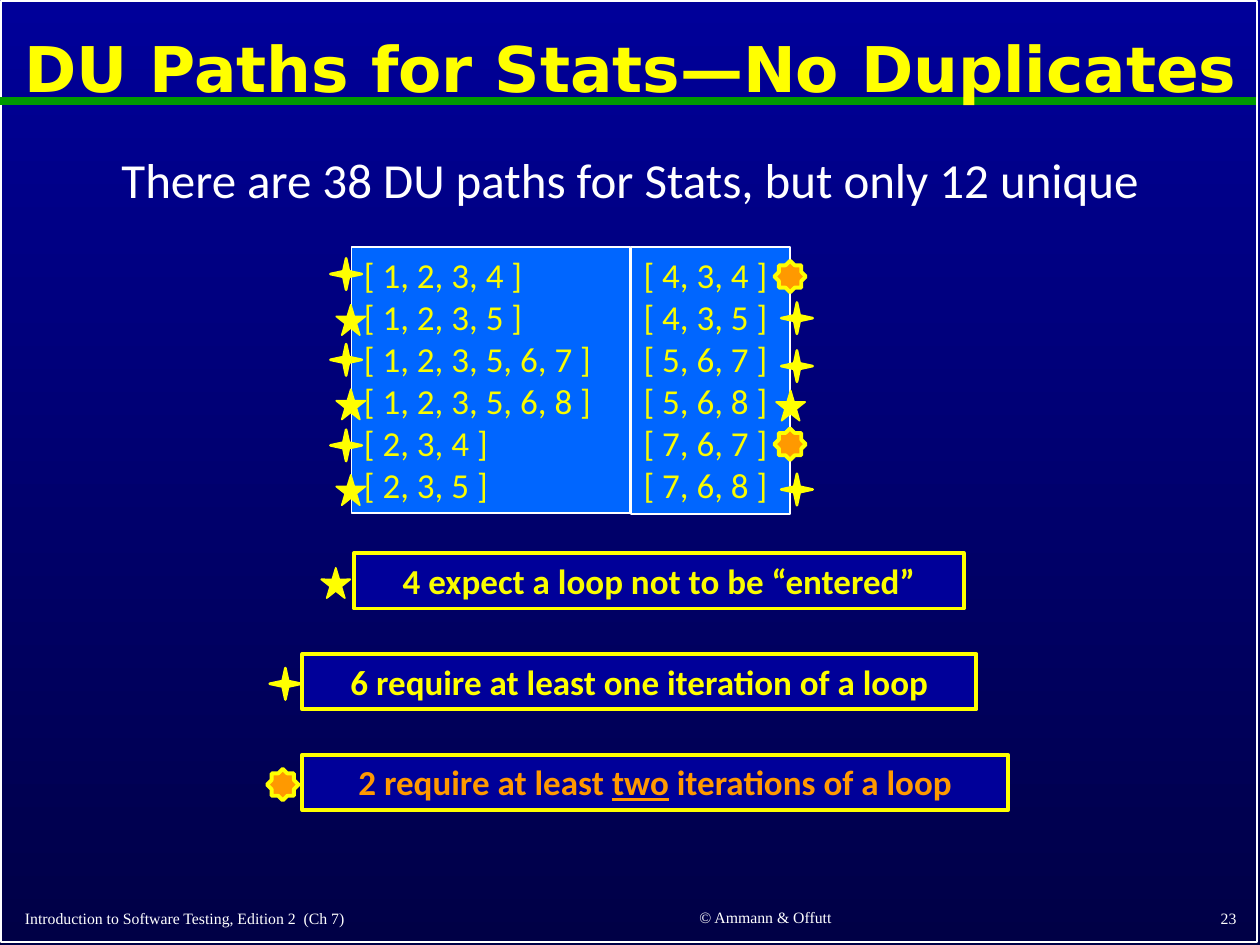
from lxml.etree import SubElement
from pptx import Presentation
from pptx.dml.color import RGBColor
from pptx.enum.shapes import MSO_CONNECTOR, MSO_SHAPE as SHAPE
from pptx.enum.text import MSO_ANCHOR as ANCHOR, PP_ALIGN as ALIGN
from pptx.oxml.ns import qn
from pptx.util import Pt

WHITE, YELLOW, SOFT_YELLOW = "FFFFFF", "FFFF00", "FAFD00"
ORANGE, NAVY, BLUE, GREEN = "FF9900", "000099", "0066FF", "009900"

TITLE = "DU Paths for Stats—No Duplicates"
SUMMARY = "There are 38 DU paths for Stats, but only 12 unique"
FOOTERS = [  # text, box, alignment
    ("Introduction to Software Testing, Edition 2  (Ch 7)", (7.2, 515.5, 296, 18.7), ALIGN.LEFT),
    ("© Ammann & Offutt", (323.3, 514.8, 228.2, 18.7), ALIGN.CENTER),
    ("23", (563.8, 514.8, 149.8, 19.4), ALIGN.RIGHT),
]

# mark: shape, size, adjustment, fill, line width
MARKS = {
    "skip": (SHAPE.STAR_5_POINT, (16.6, 17.3), None, YELLOW, 1),
    "once": (SHAPE.STAR_4_POINT, (18, 18), 0.125, YELLOW, 1.5),
    "twice": (SHAPE.STAR_8_POINT, (18, 18), 0.383, ORANGE, 2.25),
}

# box, centre x of each mark, rows of (path, mark, centre y of the mark)
PATH_COLUMNS = [
    ((200.9, 141.1, 159.1, 151.9), {"skip": 200.5, "once": 197.8}, [
        ("[ 1, 2, 3, 4 ]", "once", 156.6),
        ("[ 1, 2, 3, 5 ]", "skip", 182.9),
        ("[ 1, 2, 3, 5, 6, 7 ]", "once", 205.6),
        ("[ 1, 2, 3, 5, 6, 8 ]", "skip", 231.1),
        ("[ 2, 3, 4 ]", "once", 254.5),
        ("[ 2, 3, 5 ]", "skip", 280.1),
    ]),
    ((360.7, 141.1, 90.7, 152.6), {"skip": 451.8, "once": 455.4, "twice": 451.5}, [
        ("[ 4, 3, 4 ]", "twice", 158),
        ("[ 4, 3, 5 ]", "once", 181.8),
        ("[ 5, 6, 7 ]", "once", 209.2),
        ("[ 5, 6, 8 ]", "skip", 231.8),
        ("[ 7, 6, 7 ]", "twice", 253.8),
        ("[ 7, 6, 8 ]", "once", 279.7),
    ]),
]

# mark, its centre x, box left, box width, colour, text pieces (every second one underlined)
LEGEND = [
    ("skip", 191.9, 202.3, 348.5, SOFT_YELLOW, ["4 expect a loop not to be “entered”"]),
    ("once", 163.1, 172.8, 385.2, YELLOW, ["6 require at least one iteration of a loop"]),
    ("twice", 161.6, 172.8, 403.2, ORANGE,
     ["2 require at least ", "two", " iterations of a loop"]),
]
LEGEND_TOP, LEGEND_PITCH, LEGEND_HEIGHT = 316.1, 57.6, 31.7


def rgb(hex_color):
    return RGBColor.from_string(hex_color)


def write(shape, lines, size, color, font="Calibri", bold=False,
          align=ALIGN.LEFT, anchor=ANCHOR.TOP, spacing=None):
    """Fill a shape with paragraphs; a line given as a list underlines every second piece."""
    frame = shape.text_frame
    frame.word_wrap = True
    frame.vertical_anchor = anchor
    for i, line in enumerate(lines):
        paragraph = frame.add_paragraph() if i else frame.paragraphs[0]
        paragraph.alignment = align
        if spacing:
            paragraph.line_spacing = spacing
        for j, piece in enumerate([line] if isinstance(line, str) else line):
            run = paragraph.add_run()
            run.text = piece
            run.font.name, run.font.size, run.font.bold = font, Pt(size), bold
            run.font.underline = j % 2 == 1
            run.font.color.rgb = rgb(color)


def add_box(shapes, kind, box, fill, line, width):
    shape = shapes.add_shape(kind, *map(Pt, box))
    shape.shadow.inherit = False
    if fill:
        shape.fill.solid()
        shape.fill.fore_color.rgb = rgb(fill)
    else:
        shape.fill.background()
    shape.line.color.rgb = rgb(line)
    shape.line.width = Pt(width)
    return shape


def add_text(shapes, text, box, **text_format):
    write(shapes.add_textbox(*map(Pt, box)), [text], **text_format)


def add_mark(shapes, mark, x, y):
    """Draw a star centred on x, y."""
    kind, (w, h), adjustment, fill, width = MARKS[mark]
    star = add_box(shapes, kind, (x - w / 2, y - h / 2, w, h), fill, YELLOW, width)
    if adjustment:
        star.adjustments[0] = adjustment


def add_frame(slide):
    background = slide.background.fill
    background.gradient()
    background.gradient_angle = 270
    for stop, color in zip(background.gradient_stops, (NAVY, "000046")):
        stop.color.rgb = rgb(color)
    add_box(slide.shapes, SHAPE.RECTANGLE, (0.7, 0.7, 717.8, 537.8), None, WHITE, 1)
    rule = slide.shapes.add_connector(MSO_CONNECTOR.STRAIGHT, 0, Pt(57.6), Pt(717.8), Pt(57.6))
    rule.line.color.rgb = rgb(GREEN)
    rule.line.width = Pt(4.5)
    SubElement(rule.element.spPr, qn("a:effectLst"))


def main():
    deck = Presentation()
    deck.slide_width, deck.slide_height = Pt(720), Pt(540)
    slide = deck.slides.add_slide(deck.slide_layouts[6])
    shapes = slide.shapes
    add_frame(slide)

    for text, box, align in FOOTERS:
        add_text(shapes, text, box, size=9, color=WHITE, font="Times New Roman",
                 align=align, anchor=ANCHOR.MIDDLE)
    add_text(shapes, TITLE, (5.8, 7.9, 709.2, 66.2), size=36, color=YELLOW, font="DejaVu Sans",
             bold=True, align=ALIGN.CENTER, anchor=ANCHOR.MIDDLE, spacing=0.9)
    add_text(shapes, SUMMARY, (10.8, 85.7, 698.4, 46.1), size=28, color=WHITE,
             align=ALIGN.CENTER, spacing=0.9)

    for box, _, rows in PATH_COLUMNS:
        column = add_box(shapes, SHAPE.RECTANGLE, box, BLUE, WHITE, 1)
        write(column, [path for path, _, _ in rows], size=20, color=SOFT_YELLOW)
    for _, mark_x, rows in PATH_COLUMNS:
        for _, mark, y in rows:
            add_mark(shapes, mark, mark_x[mark], y)

    for i, (mark, x, left, width, color, pieces) in enumerate(LEGEND):
        top = LEGEND_TOP + i * LEGEND_PITCH
        entry = add_box(shapes, SHAPE.RECTANGLE, (left, top, width, LEGEND_HEIGHT),
                        NAVY, YELLOW, 2.25)
        write(entry, [pieces], size=20, color=color, bold=True, align=ALIGN.CENTER)
        add_mark(shapes, mark, x, top + LEGEND_HEIGHT / 2 + 1.2)

    deck.save("out.pptx")


if __name__ == "__main__":
    main()
